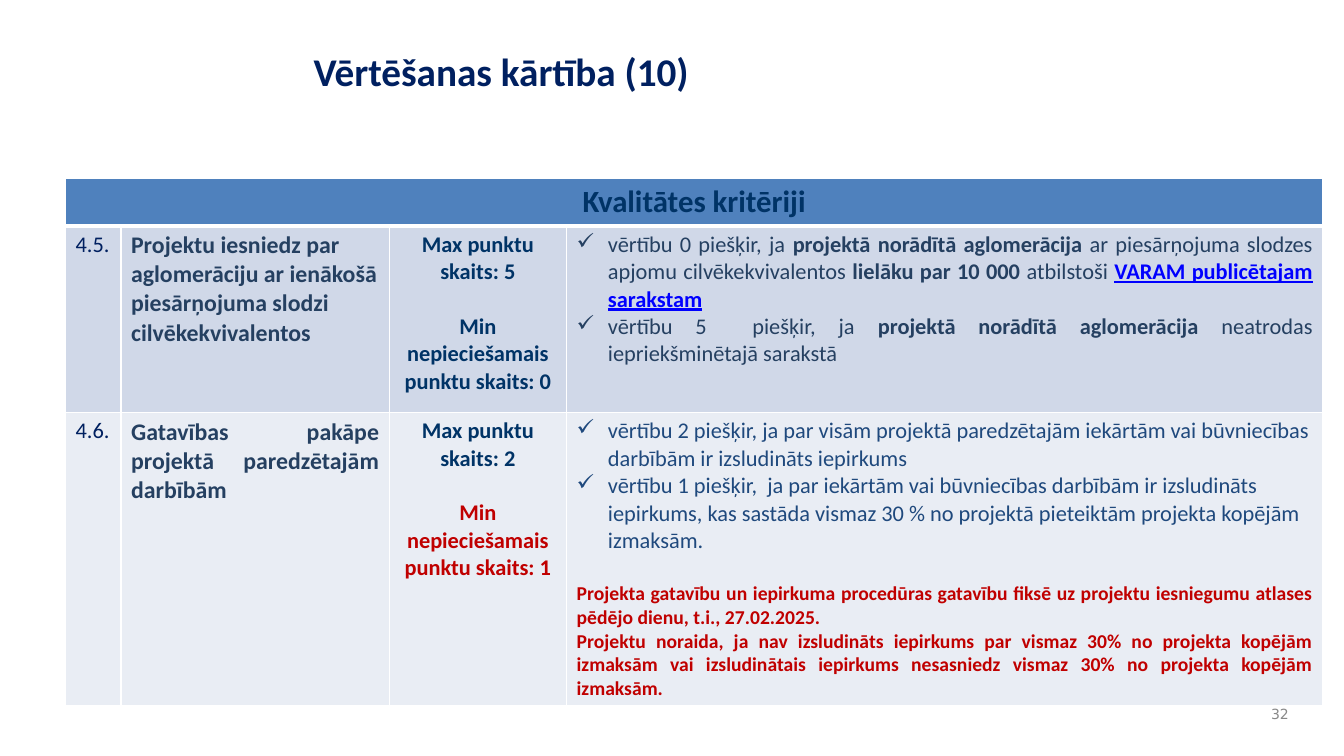
"""Build the quality criteria slide with its scoring table."""
import lxml.etree
import pptx
import pptx.dml.color
import pptx.enum.text
import pptx.oxml
import pptx.oxml.ns
import pptx.util

Inches = pptx.util.Inches
Pt = pptx.util.Pt
RGBColor = pptx.dml.color.RGBColor
ALIGN = pptx.enum.text.PP_ALIGN
ANCHOR = pptx.enum.text.MSO_ANCHOR
qn = pptx.oxml.ns.qn

NAVY = RGBColor(0x00, 0x20, 0x60)
DEEP_BLUE = RGBColor(0x00, 0x33, 0x66)
SLATE = RGBColor(0x25, 0x40, 0x61)
BLUE = RGBColor(0x1F, 0x49, 0x7D)
LINK_BLUE = RGBColor(0x00, 0x00, 0xFF)
RED = RGBColor(0xC0, 0x00, 0x00)
GREY = RGBColor(0x89, 0x89, 0x89)
WHITE = RGBColor(0xFF, 0xFF, 0xFF)
HEADER_FILL = RGBColor(0x4F, 0x81, 0xBD)
ROW_FILLS = [RGBColor(0xD0, 0xD8, 0xE8), RGBColor(0xE9, 0xED, 0xF4)]

COLUMN_WIDTHS = [0.55, 2.66, 1.76, 7.5]
ROW_HEIGHTS = [0.44, 1.85, 2.86]
BULLET_INDENT = Inches(0.31)
LINE_GAP = 19.5

CRITERIA = [
    {
        "number": "4.5.",
        "name": "Projektu iesniedz par aglomerāciju ar ienākošā piesārņojuma slodzi cilvēkekvivalentos",
        "name_align": ALIGN.LEFT,
        "maximum": "Max punktu skaits: 5",
        "minimum": "Min nepieciešamais punktu skaits: 0",
        "minimum_color": DEEP_BLUE,
        "rule_format": {"color": SLATE, "align": ALIGN.JUSTIFY},
        "rules": [
            [
                ("vērtību 0 piešķir, ja ", {}),
                ("projektā norādītā aglomerācija ", {"bold": True}),
                ("ar piesārņojuma slodzes apjomu cilvēkekvivalentos ", {}),
                ("lielāku par 10 000 ", {"bold": True}),
                ("atbilstoši ", {}),
                ("VARAM publicētajam sarakstam", {"bold": True, "color": LINK_BLUE, "underline": True}),
            ],
            [
                ("vērtību 5  piešķir, ja ", {}),
                ("projektā norādītā aglomerācija", {"bold": True}),
                (" neatrodas iepriekšminētajā sarakstā", {}),
            ],
        ],
        "warnings": [],
    },
    {
        "number": "4.6.",
        "name": "Gatavības pakāpe projektā paredzētajām darbībām",
        "name_align": ALIGN.JUSTIFY,
        "maximum": "Max punktu skaits: 2",
        "minimum": "Min nepieciešamais punktu skaits: 1",
        "minimum_color": RED,
        "rule_format": {"color": BLUE},
        "rules": [
            "vērtību 2 piešķir, ja par visām projektā paredzētajām iekārtām vai būvniecības "
            "darbībām ir izsludināts iepirkums",
            "vērtību 1 piešķir,  ja par iekārtām vai būvniecības darbībām ir izsludināts iepirkums, "
            "kas sastāda vismaz 30 % no projektā pieteiktām projekta kopējām izmaksām.",
        ],
        "warnings": [
            "Projekta gatavību un iepirkuma procedūras gatavību fiksē uz projektu iesniegumu "
            "atlases pēdējo dienu, t.i., 27.02.2025.",
            "Projektu noraida, ja nav izsludināts iepirkums par vismaz 30% no projekta kopējām "
            "izmaksām vai izsludinātais iepirkums nesasniedz vismaz 30% no projekta kopējām izmaksām.",
        ],
    },
]


def write_paragraph(text_frame, text, size=16, color=NAVY, bold=False, underline=False,
                    font="Calibri", align=ALIGN.LEFT, space_before=0, bullet=None):
    """Write a string, or a list of (text, format) runs, as the next paragraph."""
    paragraph = text_frame.paragraphs[0]
    if paragraph.runs:
        paragraph = text_frame.add_paragraph()
    paragraph.alignment = align
    paragraph.space_before = Pt(space_before)
    if bullet:
        properties = paragraph._p.get_or_add_pPr()
        properties.set("marL", str(BULLET_INDENT))
        properties.set("indent", str(-BULLET_INDENT))
        lxml.etree.SubElement(properties, qn("a:buChar")).set("char", bullet)
    runs = [(text, {})] if isinstance(text, str) else text
    for run_text, changes in runs:
        run = paragraph.add_run()
        run.text = run_text
        run.font.name = font
        run.font.size = Pt(size)
        run.font.bold = changes.get("bold", bold)
        run.font.underline = changes.get("underline", underline)
        run.font.color.rgb = changes.get("color", color)


def format_cell(cell, fill, bottom_width=1):
    """Give a cell white borders and a solid fill."""
    properties = cell._tc.get_or_add_tcPr()
    for side, width in (("L", 1), ("R", 1), ("T", 1), ("B", bottom_width)):
        border = lxml.etree.SubElement(properties, qn(f"a:ln{side}"), w=str(Pt(width)))
        border_fill = lxml.etree.SubElement(border, qn("a:solidFill"))
        lxml.etree.SubElement(border_fill, qn("a:srgbClr"), val=str(WHITE))
    cell.fill.solid()
    cell.fill.fore_color.rgb = fill


def fill_criterion_row(cells, criterion, fill):
    """Write one criterion with its points and scoring rules."""
    for cell in cells:
        format_cell(cell, fill)
    number, name, points, rules = [cell.text_frame for cell in cells]
    write_paragraph(number, criterion["number"])
    write_paragraph(name, criterion["name"], size=17, color=SLATE, bold=True,
                    align=criterion["name_align"])
    write_paragraph(points, criterion["maximum"], color=DEEP_BLUE, bold=True, align=ALIGN.CENTER)
    write_paragraph(points, criterion["minimum"], color=criterion["minimum_color"], bold=True,
                    align=ALIGN.CENTER, space_before=LINE_GAP)
    for rule in criterion["rules"]:
        write_paragraph(rules, rule, bullet="✓", **criterion["rule_format"])
    for index, warning in enumerate(criterion["warnings"]):
        write_paragraph(rules, warning, size=14, color=RED, bold=True, align=ALIGN.JUSTIFY,
                        space_before=0 if index else LINE_GAP)


def add_criteria_table(slide):
    """Add the table with its merged header and criterion rows."""
    shape = slide.shapes.add_table(len(ROW_HEIGHTS), len(COLUMN_WIDTHS), Inches(0.65), Inches(1.77),
                                   Inches(sum(COLUMN_WIDTHS)), Inches(sum(ROW_HEIGHTS)))
    table = shape.table
    table.horz_banding = False
    for column, width in zip(table.columns, COLUMN_WIDTHS):
        column.width = Inches(width)
    for row, height in zip(table.rows, ROW_HEIGHTS):
        row.height = Inches(height)
    header = table.cell(0, 0)
    header.merge(table.cell(0, len(COLUMN_WIDTHS) - 1))
    for cell in table.rows[0].cells:
        format_cell(cell, HEADER_FILL, bottom_width=3)
    write_paragraph(header.text_frame, "Kvalitātes kritēriji", size=22, color=DEEP_BLUE,
                    bold=True, align=ALIGN.CENTER)
    for index, (criterion, fill) in enumerate(zip(CRITERIA, ROW_FILLS), start=1):
        fill_criterion_row(list(table.rows[index].cells), criterion, fill)


def add_title(slide, text):
    """Place and format the title placeholder."""
    title = slide.shapes.title
    title.left, title.top = Inches(3.01), Inches(0.42)
    title.width, title.height = Inches(9.65), Inches(1.13)
    title.text_frame.vertical_anchor = ANCHOR.TOP
    write_paragraph(title.text_frame, text, size=28, bold=True)


def add_slide_number(slide, text):
    """Add the page number at the lower right."""
    box = slide.shapes.add_textbox(Inches(12.44), Inches(6.92), Inches(0.44), Inches(0.33))
    box.text_frame.word_wrap = True
    box.text_frame.vertical_anchor = ANCHOR.MIDDLE
    write_paragraph(box.text_frame, text, size=10, color=GREY, font="DejaVu Sans", align=ALIGN.RIGHT)


def main():
    """Build and save the slide."""
    presentation = pptx.Presentation()
    presentation.slide_width, presentation.slide_height = Inches(13.33), Inches(7.5)
    slide = presentation.slides.add_slide(presentation.slide_layouts[5])
    add_title(slide, "Vērtēšanas kārtība (10)")
    add_criteria_table(slide)
    add_slide_number(slide, "32")
    presentation.save("out.pptx")


if __name__ == "__main__":
    main()
